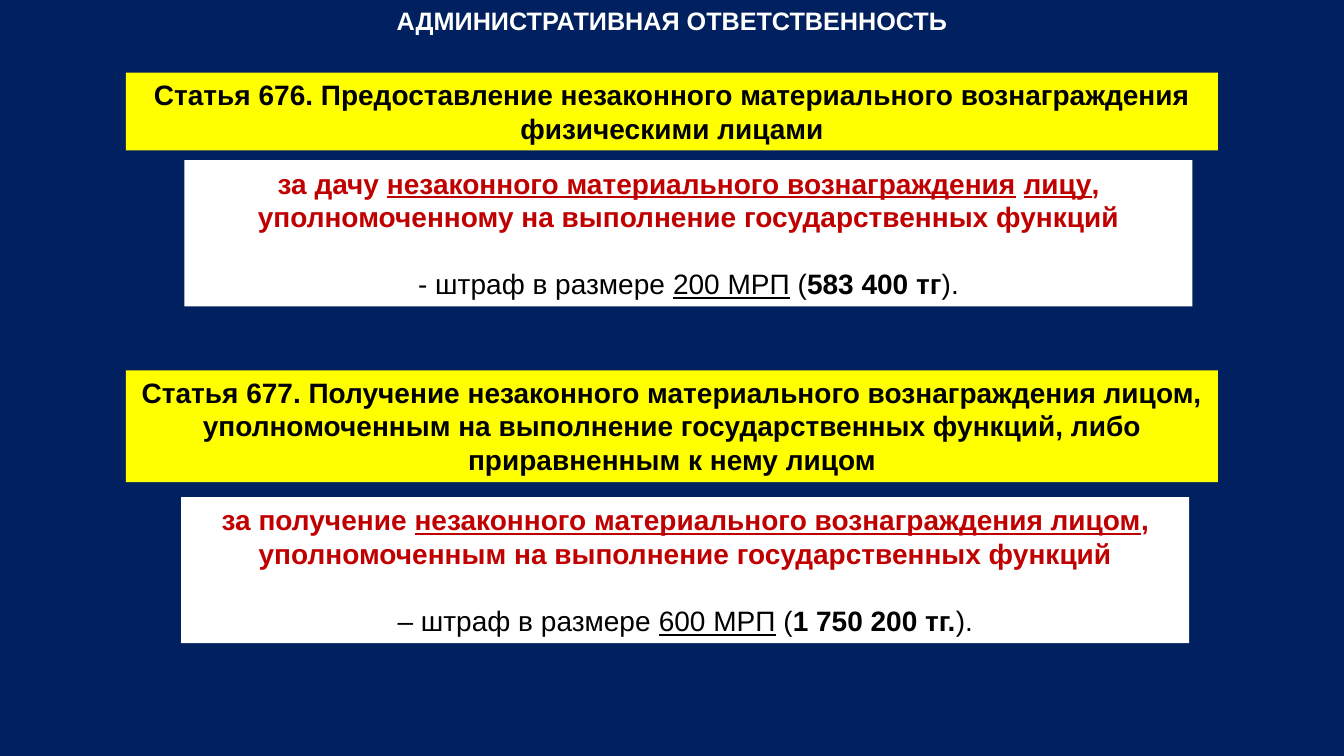
from pptx import Presentation
from pptx.dml.color import RGBColor
from pptx.enum import shapes, text
from pptx.util import Pt

NAVY = RGBColor(0x00, 0x20, 0x60)
YELLOW = RGBColor(0xFF, 0xFF, 0x00)
WHITE = RGBColor(0xFF, 0xFF, 0xFF)
RED = RGBColor(0xC0, 0x00, 0x00)
BLACK = RGBColor(0x00, 0x00, 0x00)

FONT = "Arial"
TITLE_SIZE, BODY_SIZE = 18, 20
FINE_GAP = 24
BAND_LEFT, BAND_WIDTH = 90, 780
PENALTY_WIDTH, PENALTY_HEIGHT = 720, 104.4

TITLE = "АДМИНИСТРАТИВНАЯ ОТВЕТСТВЕННОСТЬ"

# Each run is (text, style): "u" underlined, "b" bold, "" plain
ARTICLES = [
    {
        "heading": "Статья 676. Предоставление незаконного материального "
                   "вознаграждения физическими лицами",
        "heading_top": 51.8, "heading_height": 55.7,
        "penalty_left": 131.8, "penalty_top": 114.4,
        "offence": [("за дачу ", "b"),
                    ("незаконного материального вознаграждения", "bu"),
                    (" ", "b"), ("лицу", "bu"),
                    (", уполномоченному на выполнение государственных функций", "b")],
        "fine": [("- штраф в размере ", ""), ("200 МРП", "u"), (" (", ""),
                 ("583 400 тг", "b"), (").", "")],
    },
    {
        "heading": "Статья 677. Получение незаконного материального вознаграждения "
                   "лицом, уполномоченным на выполнение государственных функций, "
                   "либо приравненным к нему лицом",
        "heading_top": 264.5, "heading_height": 79.9,
        "penalty_left": 129.5, "penalty_top": 355,
        "offence": [("за получение ", "b"),
                    ("незаконного материального вознаграждения лицом", "bu"),
                    (", уполномоченным на выполнение государственных функций", "b")],
        "fine": [("– штраф в размере ", ""), ("600 МРП", "u"), (" (", ""),
                 ("1 750 200 тг.", "b"), (").", "")],
    },
]


def write_runs(paragraph, runs, size, color):
    paragraph.alignment = text.PP_ALIGN.CENTER
    for words, style in runs:
        run = paragraph.add_run()
        run.text = words
        run.font.name = FONT
        run.font.size = Pt(size)
        run.font.bold = "b" in style
        run.font.underline = "u" in style
        run.font.color.rgb = color


def add_box(slide, left, top, width, height, fill, anchor):
    """Add a borderless rectangle and return its text frame."""
    shape = slide.shapes.add_shape(shapes.MSO_SHAPE.RECTANGLE,
                                   Pt(left), Pt(top), Pt(width), Pt(height))
    shape.shadow.inherit = False
    shape.fill.solid()
    shape.fill.fore_color.rgb = fill
    shape.line.fill.background()
    shape.text_frame.word_wrap = True
    shape.text_frame.vertical_anchor = anchor
    return shape.text_frame


def add_title(slide):
    title = slide.shapes.title
    title.left, title.top = Pt(BAND_LEFT), Pt(0)
    title.width, title.height = Pt(BAND_WIDTH), Pt(29)
    title.fill.solid()
    title.fill.fore_color.rgb = NAVY
    frame = title.text_frame
    frame.auto_size = text.MSO_AUTO_SIZE.NONE
    frame.vertical_anchor = text.MSO_ANCHOR.TOP
    write_runs(frame.paragraphs[0], [(TITLE, "b")], TITLE_SIZE, WHITE)


def add_article(slide, article):
    heading = add_box(slide, BAND_LEFT, article["heading_top"], BAND_WIDTH,
                      article["heading_height"], YELLOW, text.MSO_ANCHOR.TOP)
    write_runs(heading.paragraphs[0], [(article["heading"], "b")], BODY_SIZE, BLACK)

    penalty = add_box(slide, article["penalty_left"], article["penalty_top"],
                      PENALTY_WIDTH, PENALTY_HEIGHT, WHITE, text.MSO_ANCHOR.MIDDLE)
    write_runs(penalty.paragraphs[0], article["offence"], BODY_SIZE, RED)
    fine = penalty.add_paragraph()
    fine.space_before = Pt(FINE_GAP)
    write_runs(fine, article["fine"], BODY_SIZE, BLACK)


def main():
    presentation = Presentation()
    presentation.slide_width, presentation.slide_height = Pt(960), Pt(540)
    slide = presentation.slides.add_slide(presentation.slide_layouts[5])
    slide.background.fill.solid()
    slide.background.fill.fore_color.rgb = NAVY
    add_title(slide)
    for article in ARTICLES:
        add_article(slide, article)
    presentation.save("out.pptx")


if __name__ == "__main__":
    main()
